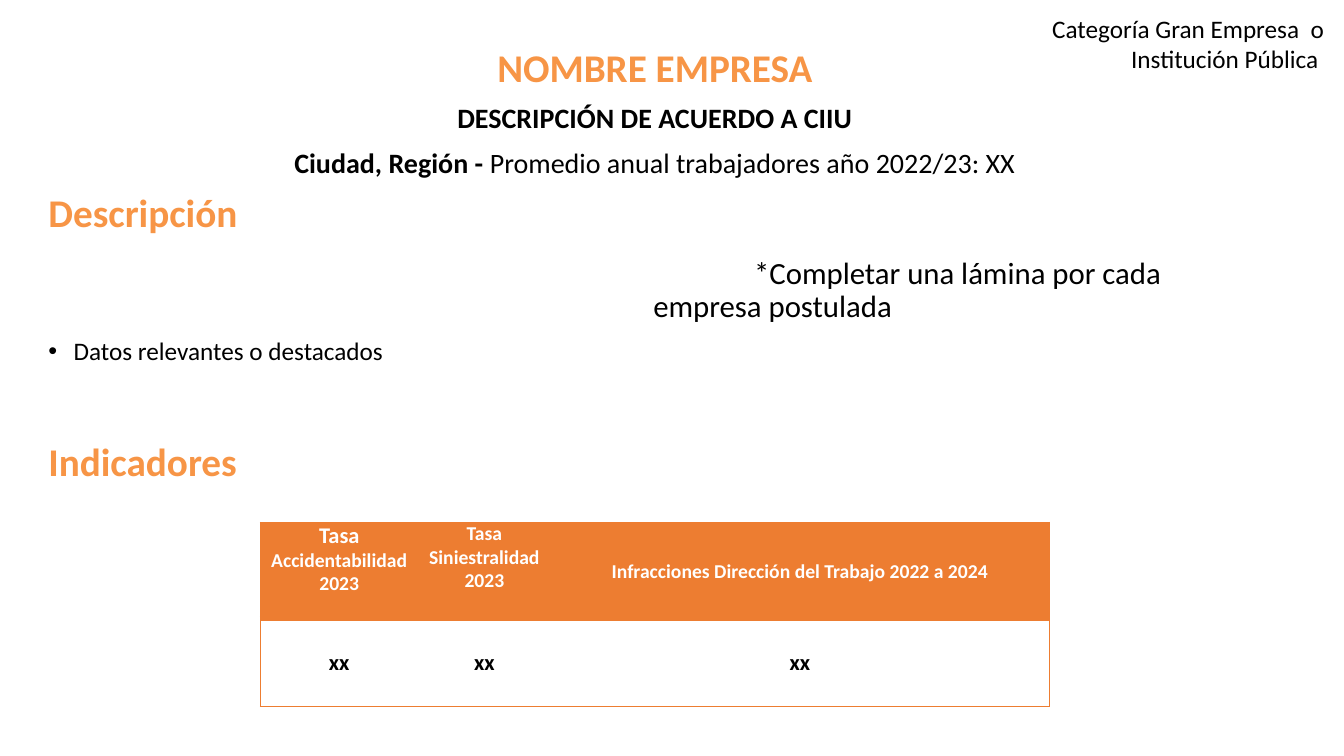
from lxml import etree
from pptx import Presentation
from pptx.dml.color import RGBColor
from pptx.enum.text import MSO_AUTO_SIZE, PP_ALIGN
from pptx.oxml.ns import qn
from pptx.util import Inches, Pt

LEFT, CENTER, RIGHT = PP_ALIGN.LEFT, PP_ALIGN.CENTER, PP_ALIGN.RIGHT
FIT_SHAPE, NO_FIT = MSO_AUTO_SIZE.SHAPE_TO_FIT_TEXT, MSO_AUTO_SIZE.NONE
FONT = "Calibri"
BLACK, WHITE = "000000", "FFFFFF"
HEADING, TABLE_ORANGE = "F79546", "ED7D31"
NO_TABLE_STYLE = "{2D5ABB26-0587-4C30-8999-92F81FD0307C}"


def rgb(color):
    return RGBColor.from_string(color)


def add_run(p, text, size, color=BLACK, bold=False):
    r = p.add_run()
    r.text = text
    r.font.name = FONT
    r.font.size = Pt(size)
    r.font.bold = bold
    r.font.color.rgb = rgb(color)


def place(sp, left, top, width, height):
    sp.left, sp.top = Inches(left), Inches(top)
    sp.width, sp.height = Inches(width), Inches(height)


def add_paragraph(tf, align=LEFT, before=10, margin=0, indent=0, bullet=None):
    """Return the next free paragraph, with its spacing, indents and bullet set."""
    p = tf.paragraphs[0] if not tf.paragraphs[0].runs else tf.add_paragraph()
    p.alignment = align
    p.line_spacing = 0.9
    p.space_before = Pt(before)
    pPr = p._p.get_or_add_pPr()
    pPr.set("marL", str(Inches(margin)))
    pPr.set("indent", str(Inches(indent)))
    if bullet:
        etree.SubElement(pPr, qn("a:buFont")).set("typeface", "Arial")
        etree.SubElement(pPr, qn("a:buChar")).set("char", bullet)
    else:
        etree.SubElement(pPr, qn("a:buNone"))
    return p


def fill_body(body):
    place(body, 0.38, 0.43, 12.23, 6.72)
    tf = body.text_frame
    tf.auto_size = NO_FIT
    add_run(add_paragraph(tf, CENTER), "NOMBRE EMPRESA", 28, HEADING, True)
    add_run(add_paragraph(tf, CENTER), "DESCRIPCIÓN DE ACUERDO A CIIU", 20, bold=True)
    p = add_paragraph(tf, CENTER)
    add_run(p, "Ciudad, Región - ", 20, bold=True)
    add_run(p, "Promedio anual trabajadores año 2022/23: XX", 20)
    add_run(add_paragraph(tf), "Descripción", 28, HEADING, True)
    p = add_paragraph(tf, before=16, margin=6, indent=1)
    add_run(p, "*Completar una lámina por cada", 22)
    p.add_line_break()
    add_run(p, "empresa postulada", 22)
    p = add_paragraph(tf, margin=0.25, indent=-0.25, bullet="•")
    add_run(p, "Datos relevantes o destacados", 18)
    add_run(add_paragraph(tf, before=55), "Indicadores", 28, HEADING, True)


def add_category(slide):
    sp = slide.shapes.add_textbox(0, 0, 0, 0)
    place(sp, 10.29, 0.08, 2.94, 0.71)
    tf = sp.text_frame
    tf.word_wrap = True
    tf.auto_size = FIT_SHAPE
    p = tf.paragraphs[0]
    p.alignment = RIGHT
    add_run(p, "Categoría Gran Empresa  o Institución Pública ", 18)


def set_borders(cell, widths):
    """Draw the borders given as {side: points}, sides in the order L, R, T, B."""
    tcPr = cell._tc.get_or_add_tcPr()
    for i, (side, width) in enumerate(widths.items()):
        ln = etree.Element(qn(f"a:ln{side}"), w=str(Pt(width)))
        fill = etree.SubElement(ln, qn("a:solidFill"))
        etree.SubElement(fill, qn("a:srgbClr")).set("val", TABLE_ORANGE)
        tcPr.insert(i, ln)


def fill_cell(cell, runs, color, top):
    cell.margin_left = cell.margin_right = cell.margin_bottom = 0
    cell.margin_top = Inches(top)
    p = cell.text_frame.paragraphs[0]
    p.alignment = CENTER
    p.line_spacing = 0.98
    for text, size in runs:
        add_run(p, text, size, color, True)


def add_indicators(slide):
    headers = [
        ([("Tasa ", 16), ("Accidentabilidad 2023", 14)], 0),
        ([("Tasa Siniestralidad 2023", 14)], 0),
        ([("Infracciones Dirección del Trabajo 2022 a 2024", 14)], 0.37),
    ]
    widths, heights = [1.57, 1.31, 4.95], [0.96, 0.87]
    frame = slide.shapes.add_table(2, 3, Inches(2.58), Inches(5.18),
                                   Inches(sum(widths)), Inches(sum(heights)))
    table = frame.table
    table._tbl.tblPr.find(qn("a:tableStyleId")).text = NO_TABLE_STYLE
    for row, height in zip(table.rows, heights):
        row.height = Inches(height)
    last = len(widths) - 1
    for i, (width, (runs, top)) in enumerate(zip(widths, headers)):
        table.columns[i].width = Inches(width)
        sides = {}
        if i == 0:
            sides["L"] = 0.5
        if i == last:
            sides["R"] = 0.5
        header, value = table.cell(0, i), table.cell(1, i)
        fill_cell(header, runs, WHITE, top)
        header.fill.solid()
        header.fill.fore_color.rgb = rgb(TABLE_ORANGE)
        set_borders(header, {**sides, "T": 0.5})
        fill_cell(value, [("xx", 16)], BLACK, 0.3)
        value.fill.background()
        set_borders(value, {**sides, "T": 4, "B": 0.5})


def main():
    prs = Presentation()
    prs.slide_width, prs.slide_height = Inches(13.33), Inches(7.5)
    slide = prs.slides.add_slide(prs.slide_layouts[1])
    title = slide.shapes.title._element
    title.getparent().remove(title)
    fill_body(slide.placeholders[1])
    add_category(slide)
    add_indicators(slide)
    prs.save("out.pptx")


if __name__ == "__main__":
    main()
